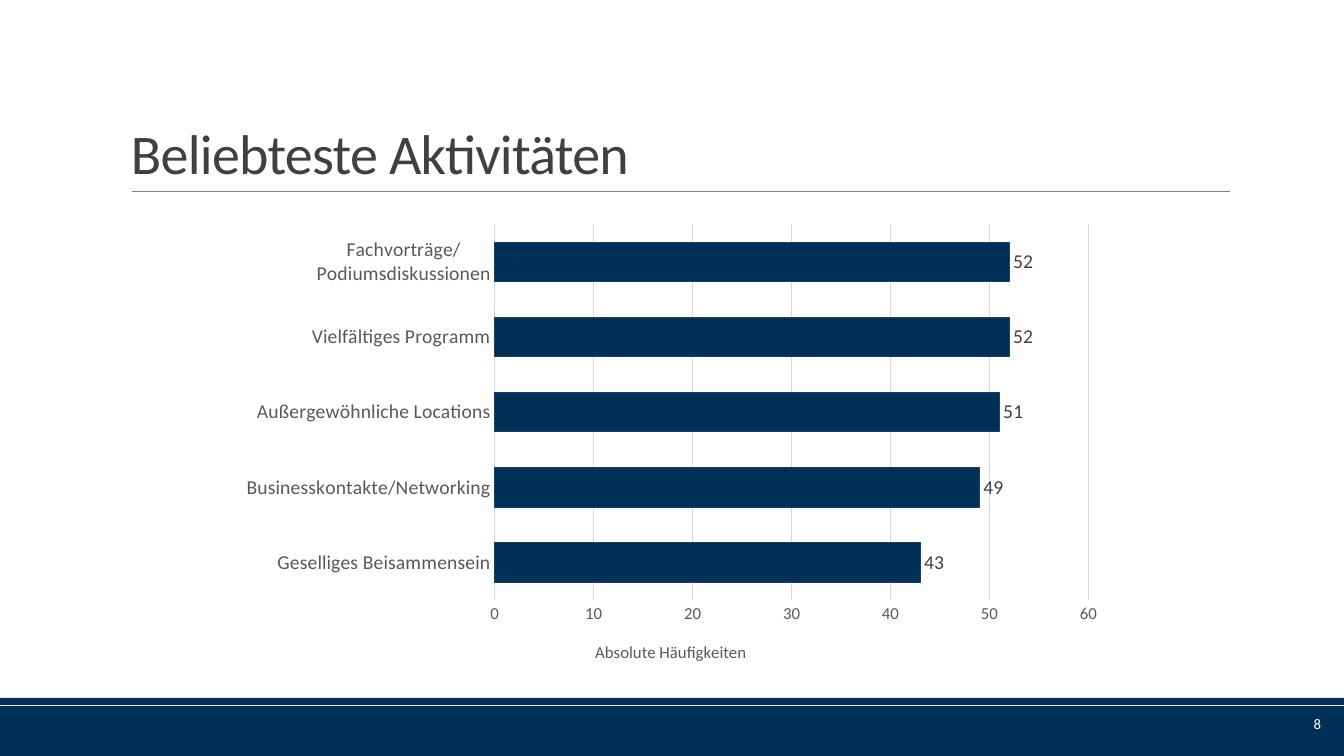
import lxml.etree
import pptx
import pptx.chart.data
import pptx.dml.color
import pptx.enum.chart
import pptx.enum.shapes
import pptx.enum.text
import pptx.oxml
import pptx.oxml.ns
import pptx.util

EMU_PER_PX = 914400 / 100.8
SLIDE_WIDTH, SLIDE_HEIGHT = 1344, 756
FONT = "Calibri"
NAVY, WHITE = "003058", "FFFFFF"
DARK, MEDIUM, RULE, GRID = "404040", "595959", "808080", "D9D9D9"
ACTIVITIES = {
    "Geselliges Beisammensein": 43,
    "Businesskontakte/Networking": 49,
    "Außergewöhnliche Locations": 51,
    "Vielfältiges Programm": 52,
    "Fachvorträge/Podiumsdiskussionen": 52,
}


def px(length):
    return pptx.util.Emu(round(length * EMU_PER_PX))


def color(value):
    return pptx.dml.color.RGBColor.from_string(value)


def set_font(font, size, font_color):
    font.name = FONT
    font.size = pptx.util.Pt(size)
    font.bold = False
    font.color.rgb = color(font_color)


def set_line(line, line_color, width):
    line.color.rgb = color(line_color)
    line.width = pptx.util.Pt(width)


def add_text(slide, box, text, size, font_color, align="LEFT", anchor="MIDDLE",
             line_spacing=1.0, character_spacing=0):
    shape = slide.shapes.add_textbox(*map(px, box))
    frame = shape.text_frame
    frame.word_wrap = True
    frame.vertical_anchor = getattr(pptx.enum.text.MSO_ANCHOR, anchor)
    paragraph = frame.paragraphs[0]
    paragraph.alignment = getattr(pptx.enum.text.PP_ALIGN, align)
    paragraph.line_spacing = line_spacing
    run = paragraph.add_run()
    run.text = text
    set_font(run.font, size, font_color)
    if character_spacing:
        run.font._element.set("spc", str(round(character_spacing * 100)))


def add_bar(slide, box):
    shape = slide.shapes.add_shape(pptx.enum.shapes.MSO_SHAPE.RECTANGLE, *map(px, box))
    shape.shadow.inherit = False
    shape.fill.solid()
    shape.fill.fore_color.rgb = color(NAVY)
    shape.line.fill.background()


def add_header(slide, box, title):
    left, top, width, height = box
    bottom = top + height
    connector = slide.shapes.add_connector(
        pptx.enum.shapes.MSO_CONNECTOR.STRAIGHT,
        px(left + 11), px(bottom), px(left + width), px(bottom))
    set_line(connector.line, RULE, 0.5)
    lxml.etree.SubElement(connector._element.spPr, pptx.oxml.ns.qn("a:effectLst"))
    add_text(slide, box, title, 40, DARK, anchor="BOTTOM",
             line_spacing=0.85, character_spacing=-0.5)


def add_footer(slide, box, number):
    left, top, width, height = box
    strip_height = 7
    add_bar(slide, (left, top + strip_height + 1, width, height - strip_height - 1))
    add_bar(slide, (left, top, width, strip_height))
    add_text(slide, (left + width - 157, top + 6, 144, 40), number, 10.5, WHITE, align="RIGHT")


def set_layout(parent, index, **fractions):
    for previous in parent.findall(pptx.oxml.ns.qn("c:layout")):
        parent.remove(previous)
    entries = "".join(f'<c:{name} val="{value}"/>' for name, value in fractions.items())
    parent.insert(index, pptx.oxml.parse_xml(
        f'<c:layout {pptx.oxml.ns.nsdecls("c")}><c:manualLayout>{entries}'
        '</c:manualLayout></c:layout>'))


def add_activity_chart(slide, box):
    data = pptx.chart.data.CategoryChartData()
    data.categories = list(ACTIVITIES)
    data.add_series("Series 1", list(ACTIVITIES.values()))
    chart = slide.shapes.add_chart(
        pptx.enum.chart.XL_CHART_TYPE.BAR_CLUSTERED, *map(px, box), data).chart
    chart.has_legend = False
    chart.has_title = False
    set_font(chart.font, 10, "000000")

    plot = chart.plots[0]
    plot.vary_by_categories = False
    plot.gap_width = 90
    series = plot.series[0]
    series.format.fill.solid()
    series.format.fill.fore_color.rgb = color(NAVY)
    set_line(series.format.line, "17406D", 0.75)
    labels = series.data_labels
    labels.show_value = True
    labels.position = pptx.enum.chart.XL_LABEL_POSITION.OUTSIDE_END
    set_font(labels.font, 14, DARK)

    category_axis, value_axis = chart.category_axis, chart.value_axis
    for axis, size in ((category_axis, 14), (value_axis, 12)):
        axis.major_tick_mark = pptx.enum.chart.XL_TICK_MARK.NONE
        axis.minor_tick_mark = pptx.enum.chart.XL_TICK_MARK.NONE
        set_font(axis.tick_labels.font, size, MEDIUM)
    set_line(category_axis.format.line, GRID, 0.75)
    value_axis.format.line.fill.background()
    value_axis.minimum_scale, value_axis.maximum_scale = 0, 60
    value_axis.major_unit = 10
    set_line(value_axis.major_gridlines.format.line, GRID, 0.75)

    axis_title = value_axis.axis_title
    paragraph = axis_title.text_frame.paragraphs[0]
    run = paragraph.add_run()
    run.text = "Absolute Häufigkeiten"
    set_font(run.font, 12, MEDIUM)

    set_layout(axis_title._element, 1, xMode="edge", yMode="edge", x=0.41, y=0.91)
    set_layout(chart._chartSpace.chart.plotArea, 0, layoutTarget="inner",
               xMode="edge", yMode="edge", x=0.3, y=0.02, w=0.67, h=0.81)


def main():
    presentation = pptx.Presentation()
    presentation.slide_width = px(SLIDE_WIDTH)
    presentation.slide_height = px(SLIDE_HEIGHT)
    slide = presentation.slides.add_slide(presentation.slide_layouts[6])
    footer_top = 698
    add_footer(slide, (0, footer_top, SLIDE_WIDTH, SLIDE_HEIGHT - footer_top), "8")
    add_header(slide, (121, 31, 1109, 160), "Beliebteste Aktivitäten")
    add_activity_chart(slide, (229, 215, 886, 464))
    presentation.save("out.pptx")


if __name__ == "__main__":
    main()
